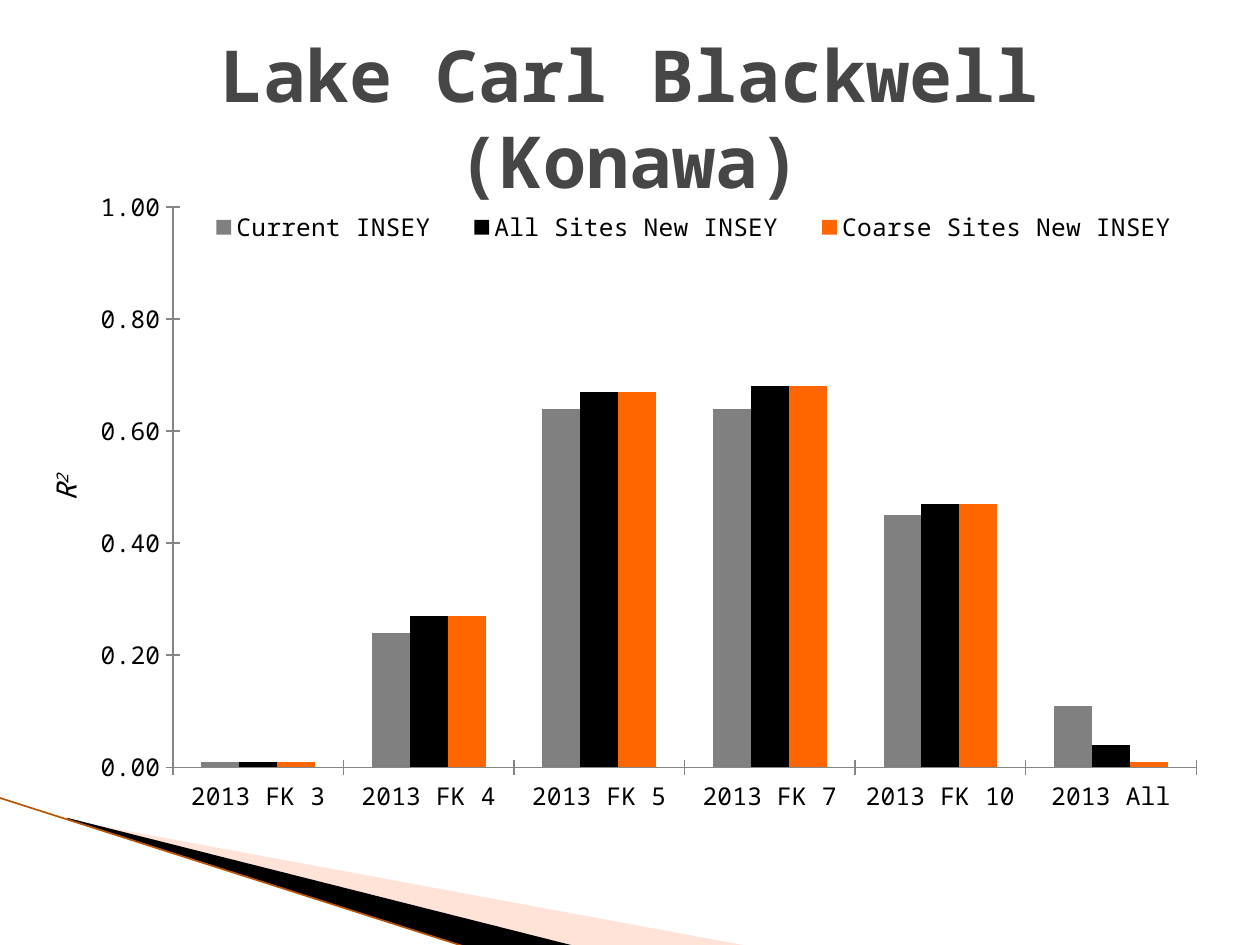
from dataclasses import dataclass
from lxml import etree
from pptx import Presentation
from pptx.chart.data import CategoryChartData
from pptx.dml.color import RGBColor
from pptx.enum.chart import XL_CHART_TYPE, XL_LEGEND_POSITION, XL_TICK_MARK
from pptx.enum.shapes import MSO_CONNECTOR
from pptx.enum.text import MSO_ANCHOR, PP_ALIGN
from pptx.oxml import parse_xml
from pptx.oxml.ns import nsdecls, qn
from pptx.util import Inches, Pt

COLUMN = XL_CHART_TYPE.COLUMN_CLUSTERED
RIGHT = XL_LEGEND_POSITION.RIGHT
CROSS = XL_TICK_MARK.CROSS
LINE = MSO_CONNECTOR.STRAIGHT
MIDDLE = MSO_ANCHOR.MIDDLE
CENTER = PP_ALIGN.CENTER


@dataclass(frozen=True)
class Theme:
    face: str = "Noto Sans Mono"
    ink: str = "000000"
    title: str = "464646"
    axis: str = "868686"
    blush: str = "FFBAA2"
    rust: str = "B85400"
    bars: tuple = ("808080", "000000", "FF6600")
    title_size: int = 41
    label_size: int = 16
    chart_size: int = 18
    tick_size: int = 14


def rgb(code):
    return RGBColor.from_string(code)


def place(box, inner=False):
    """Return a manual chart layout for fractions x, y, w, h."""
    target = '<c:layoutTarget val="inner"/>' if inner else ""
    modes = '<c:xMode val="edge"/><c:yMode val="edge"/>'
    sizes = "".join(f'<c:{k} val="{v}"/>' for k, v in zip("xywh", box))
    return parse_xml(f'<c:layout {nsdecls("c")}><c:manualLayout>{target}'
                     f'{modes}{sizes}</c:manualLayout></c:layout>')


class Painter:
    def __init__(self, slide, theme):
        self.slide = slide
        self.theme = theme

    def style(self, font, size, color=None, bold=False, italic=False):
        font.name = self.theme.face
        font.size = Pt(size)
        font.color.rgb = rgb(color or self.theme.ink)
        font.bold = bold
        font.italic = italic

    def wedge(self, points, color, alpha=None):
        start, *rest = [(Inches(x), Inches(y)) for x, y in points]
        pen = self.slide.shapes.build_freeform(*start)
        pen.add_line_segments(rest)
        shape = pen.convert_to_shape()
        shape.shadow.inherit = False
        shape.line.fill.background()
        shape.fill.solid()
        shape.fill.fore_color.rgb = rgb(color)
        if alpha:
            tint = shape.fill._xPr.find(".//" + qn("a:srgbClr"))
            etree.SubElement(tint, qn("a:alpha")).set("val", str(alpha * 1000))

    def line(self, start, end, color, width):
        ends = [Inches(v) for v in (*start, *end)]
        line = self.slide.shapes.add_connector(LINE, *ends)
        line.line.color.rgb = rgb(color)
        line.line.width = Pt(width)
        etree.SubElement(line._element.spPr, qn("a:effectLst"))

    def text(self, box, runs, size, turn=0, **look):
        """Add a centred line of text; runs are (text, raised) pairs."""
        shape = self.slide.shapes.add_textbox(*[Inches(v) for v in box])
        shape.rotation = turn
        frame = shape.text_frame
        frame.word_wrap = True
        frame.vertical_anchor = MIDDLE
        para = frame.paragraphs[0]
        para.alignment = CENTER
        self.style(para.font, size, **look)
        for words, raised in runs:
            run = para.add_run()
            run.text = words
            if raised:
                run._r.get_or_add_rPr().set("baseline", "30000")

    def chart(self, box, names, series, plot_box, key_box):
        theme = self.theme
        data = CategoryChartData(number_format="0.00")
        data.categories = names
        for name, values in series.items():
            data.add_series(name, values)
        chart = self.slide.shapes.add_chart(
            COLUMN, *[Inches(v) for v in box], data).chart
        chart.has_title = False
        self.style(chart.font, theme.chart_size)

        plot = chart.plots[0]
        plot.gap_width = 150
        plot.overlap = 0
        plot.vary_by_categories = False
        for bars, color in zip(plot.series, theme.bars):
            bars.format.fill.solid()
            bars.format.fill.fore_color.rgb = rgb(color)

        for axis in (chart.category_axis, chart.value_axis):
            axis.has_major_gridlines = False
            axis.major_tick_mark = CROSS
            axis.format.line.color.rgb = rgb(theme.axis)
            self.style(axis.tick_labels.font, theme.tick_size)
        scale = chart.value_axis
        scale.minimum_scale, scale.maximum_scale = 0, 1
        scale.major_unit = 0.2
        scale.tick_labels.number_format = "#,##0.00"
        scale.tick_labels.number_format_is_linked = False

        chart.has_legend = True
        key = chart.legend
        key.position = RIGHT
        key.include_in_layout = False
        self.style(key.font, theme.tick_size)
        for part, layout in (
                (chart._chartSpace.chart.plotArea, place(plot_box, True)),
                (key._element, place(key_box))):
            for old in part.findall(qn("c:layout")):
                part.remove(old)
            spot = 0 if part is not key._element else 1
            part.insert(spot, layout)


def main():
    deck = Presentation()
    deck.slide_width, deck.slide_height = Inches(10), Inches(7.5)
    theme = Theme()
    paint = Painter(deck.slides.add_slide(deck.slide_layouts[6]), theme)

    paint.wedge([(0.55, 6.51), (5.95, 7.51), (4.56, 7.51), (0.55, 6.5)],
                theme.blush, alpha=40)
    paint.wedge([(0.53, 6.49), (4.57, 7.51), (3.72, 7.52), (0.54, 6.5)],
                theme.ink)
    paint.line((-0.01, 6.33), (3.71, 7.52), theme.rust, 0.95)

    paint.chart(
        (0.42, 1.33, 9.25, 5.92),
        [f"2013 {site}" for site in
         ("FK 3", "FK 4", "FK 5", "FK 7", "FK 10", "All")],
        {"Current INSEY": (0.01, 0.24, 0.64, 0.64, 0.45, 0.11),
         "All Sites New INSEY": (0.01, 0.27, 0.67, 0.68, 0.47, 0.04),
         "Coarse Sites New INSEY": (0.01, 0.27, 0.67, 0.68, 0.47, 0.01)},
        plot_box=(0.103, 0.053, 0.878, 0.751),
        key_box=(0.11, 0.05, 0.88, 0.06))

    paint.text((0.5, 0.3, 9, 1.25), [("Lake Carl Blackwell (Konawa)", False)],
               theme.title_size, color=theme.title, bold=True)
    paint.text((-1.77, 3.69, 4.58, 0.37), [("R", False), ("2", True)],
               theme.label_size, turn=270, italic=True)
    deck.save("out.pptx")


if __name__ == "__main__":
    main()
